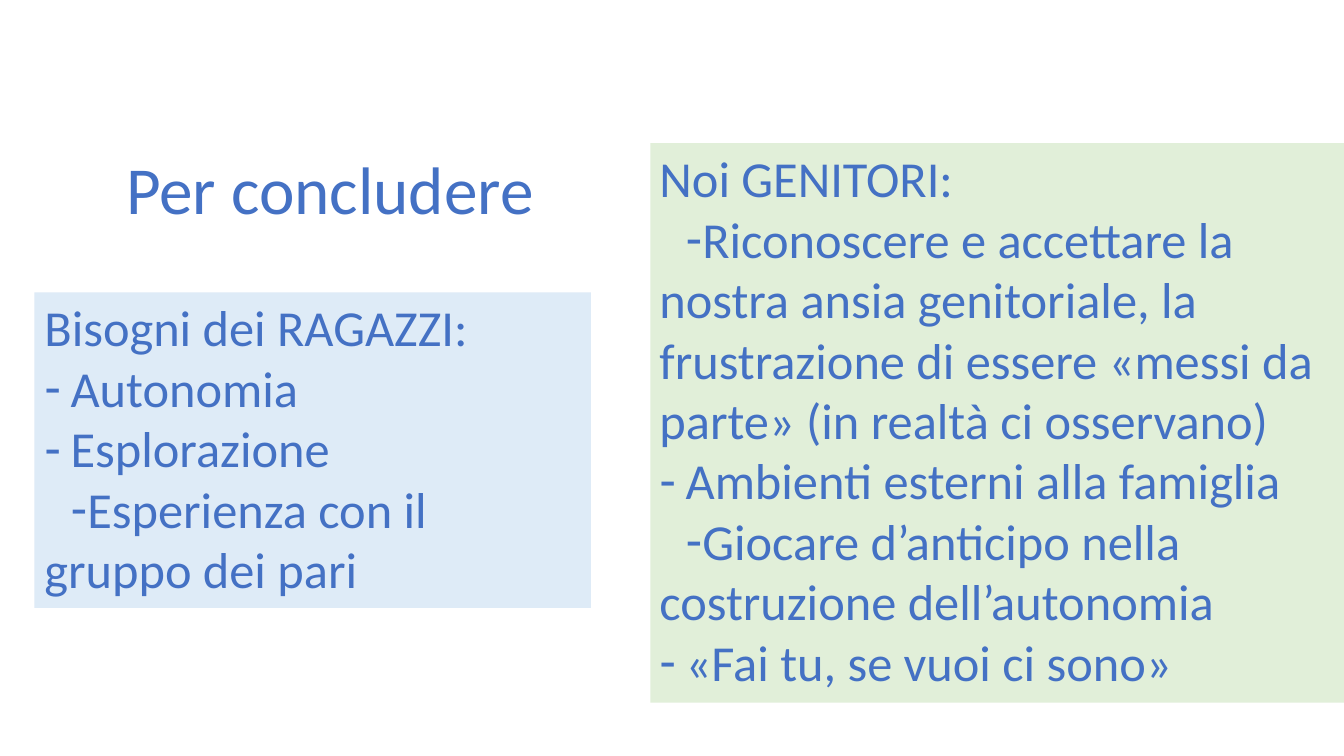
from dataclasses import dataclass

from lxml import etree
from pptx import Presentation
from pptx.dml.color import RGBColor
from pptx.enum.text import MSO_ANCHOR, MSO_AUTO_SIZE, PP_ALIGN
from pptx.oxml.ns import qn
from pptx.util import Inches, Pt


@dataclass(frozen=True)
class Theme:
    font: str = "Calibri"
    text: RGBColor = RGBColor(0x44, 0x71, 0xC4)
    blue_panel: RGBColor = RGBColor(0xDE, 0xEB, 0xF7)
    green_panel: RGBColor = RGBColor(0xE1, 0xEF, 0xD9)
    title_size: int = 48
    body_size: int = 36


theme = Theme()


def write(p, text, size=theme.body_size, left=0, first=0, bullet=None, tab=None, before=0):
    pPr = p._p.get_or_add_pPr()
    pPr.set("marL", str(Inches(left)))
    pPr.set("indent", str(Inches(first)))
    p.alignment = PP_ALIGN.LEFT
    p.space_before = Pt(before)
    if bullet:
        etree.SubElement(pPr, qn("a:buChar")).set("char", bullet)
        tabs = etree.SubElement(pPr, qn("a:tabLst"))
        etree.SubElement(tabs, qn("a:tab"), pos=str(Inches(tab)), algn="l")
    else:
        etree.SubElement(pPr, qn("a:buNone"))
    r = p.add_run()
    r.text = text
    r.font.name = theme.font
    r.font.size = Pt(size)
    r.font.color.rgb = theme.text


def place(sp, box, insets):
    sp.left, sp.top, sp.width, sp.height = [Inches(v) for v in box]
    tf = sp.text_frame
    tf.word_wrap = True
    tf.auto_size = MSO_AUTO_SIZE.NONE
    tf.vertical_anchor = MSO_ANCHOR.TOP
    tf.margin_left, tf.margin_top, tf.margin_right, tf.margin_bottom = [Inches(v) for v in insets]
    return tf


prs = Presentation()
prs.slide_width = Inches(13.33)
prs.slide_height = Inches(7.5)
s = prs.slides.add_slide(prs.slide_layouts[3])

tf = place(s.shapes.title, (1.24, 1.44, 4.08, 0.83), (0.01, 0.02, 0, 0))
write(tf.paragraphs[0], "Per concludere", size=theme.title_size)

panels = [
    (1, (0.34, 2.9, 5.52, 3.13), (0.1, 0.04, 0.6, 0), theme.blue_panel, "Bisogni dei RAGAZZI:", [
        ("Autonomia", True),
        ("Esplorazione", True),
        ("Esperienza con il gruppo dei pari", False),
    ]),
    (2, (6.45, 1.42, 6.88, 5.55), (0.09, 0.04, 0.28, 0), theme.green_panel, "Noi GENITORI:", [
        ("Riconoscere e accettare la nostra ansia genitoriale, la frustrazione "
         "di essere «messi da parte» (in realtà ci osservano)", False),
        ("Ambienti esterni alla famiglia", True),
        ("Giocare d’anticipo nella costruzione dell’autonomia", False),
        ("«Fai tu, se vuoi ci sono»", True),
    ]),
]

for idx, box, insets, fill, heading, items in panels:
    sp = s.placeholders[idx]
    sp.fill.solid()
    sp.fill.fore_color.rgb = fill
    tf = place(sp, box, insets)
    write(tf.paragraphs[0], heading)
    for text, hanging in items:
        left, first = (0.26, -0.26) if hanging else (0, 0.26)
        write(tf.add_paragraph(), text, left=left, first=first, bullet="-", tab=0.26)

prs.save("out.pptx")
